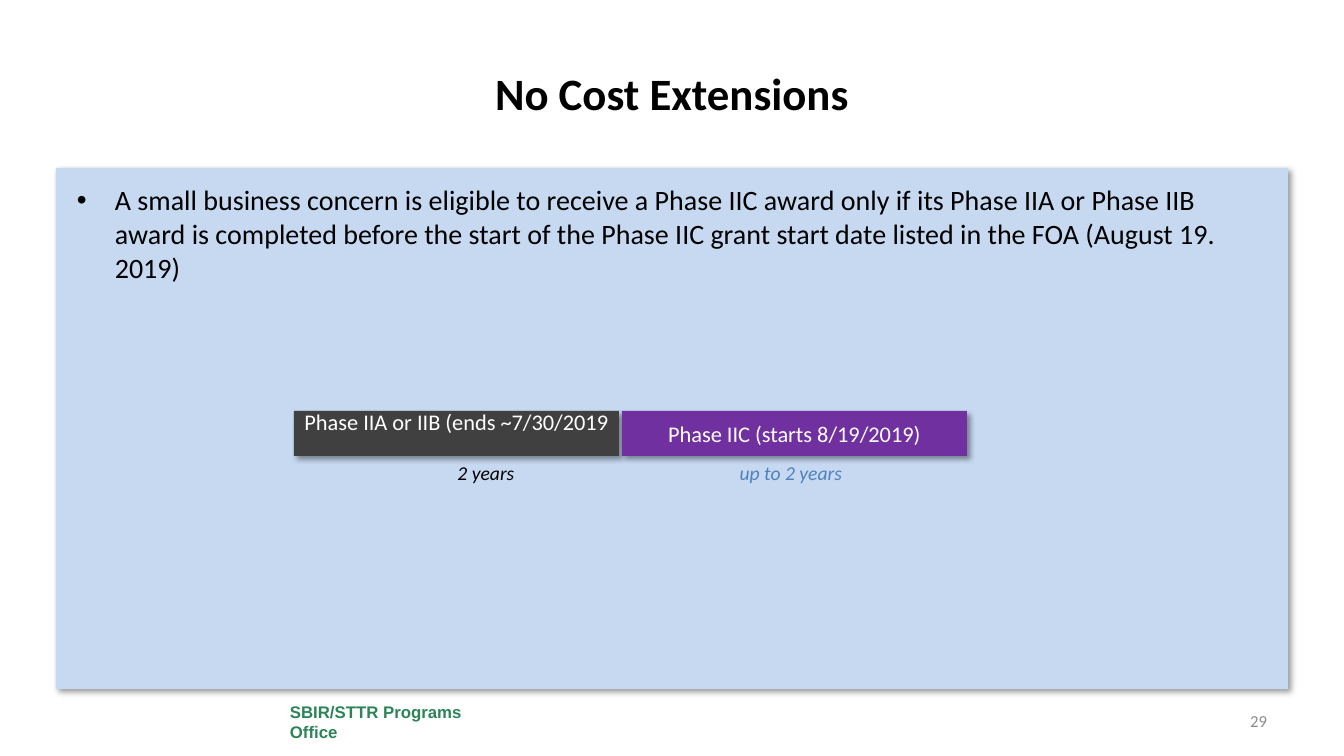
from lxml import etree
from pptx import Presentation
from pptx.dml.color import RGBColor
from pptx.enum import shapes, text
from pptx.oxml import ns
from pptx.util import Pt

PX = 9071.43  # EMU per px, 100.8 px to the inch
BLACK = RGBColor(0x00, 0x00, 0x00)
WHITE = RGBColor(0xFF, 0xFF, 0xFF)
PALE_BLUE = RGBColor(0xC6, 0xD9, 0xF1)
BLUE = RGBColor(0x4F, 0x81, 0xBD)
CHARCOAL = RGBColor(0x40, 0x40, 0x40)
PURPLE = RGBColor(0x70, 0x30, 0xA0)
GREEN = RGBColor(0x2C, 0x84, 0x58)
GRAY = RGBColor(0x8C, 0x8C, 0x8C)
LEFT, CENTER, RIGHT = text.PP_ALIGN.LEFT, text.PP_ALIGN.CENTER, text.PP_ALIGN.RIGHT
TOP, MIDDLE = text.MSO_ANCHOR.TOP, text.MSO_ANCHOR.MIDDLE

prs = Presentation()
prs.slide_width, prs.slide_height = round(1344 * PX), round(756 * PX)
s = prs.slides.add_slide(prs.slide_layouts[5])


def add_panel(box, color):
    """Add a borderless rectangle with a soft shadow to the lower right."""
    sp = s.shapes.add_shape(shapes.MSO_SHAPE.RECTANGLE, *[round(v * PX) for v in box])
    sp.fill.solid()
    sp.fill.fore_color.rgb = color
    sp.line.fill.background()
    sp.shadow.inherit = False
    effects = sp._element.spPr.find(ns.qn("a:effectLst"))
    shadow = etree.SubElement(effects, ns.qn("a:outerShdw"), blurRad=str(Pt(4)),
                              dist=str(Pt(3)), dir="2700000", algn="tl", rotWithShape="0")
    color_el = etree.SubElement(shadow, ns.qn("a:srgbClr"), val="000000")
    etree.SubElement(color_el, ns.qn("a:alpha"), val="40000")
    return sp


def write(sp, words, size, color, align, anchor=MIDDLE, font="Calibri", bold=False, italic=False):
    tf = sp.text_frame
    tf.word_wrap = True
    tf.auto_size = text.MSO_AUTO_SIZE.NONE
    tf.vertical_anchor = anchor
    p = tf.paragraphs[0]
    p.alignment = align
    r = p.add_run()
    r.text = words
    r.font.name, r.font.size = font, Pt(size)
    r.font.bold, r.font.italic = bold, italic
    r.font.color.rgb = color
    return p


add_panel((56, 168, 1232, 521), PALE_BLUE)

title = s.shapes.title
title.left, title.top, title.width, title.height = [round(v * PX) for v in (67, 30, 1210, 126)]
write(title, "No Cost Extensions", 32, BLACK, CENTER, bold=True)

body = s.shapes.add_textbox(*[round(v * PX) for v in (67, 178, 1210, 497)])
p = write(body, "A small business concern is eligible to receive a Phase IIC award only if its "
          "Phase IIA or Phase IIB award is completed before the start of the Phase IIC grant "
          "start date listed in the FOA (August 19. 2019)", 20, BLACK, LEFT, TOP)
pPr = p._p.get_or_add_pPr()
pPr.set("marL", str(round(38 * PX)))
pPr.set("indent", str(round(-38 * PX)))
etree.SubElement(pPr, ns.qn("a:buFont"), typeface="Arial")
etree.SubElement(pPr, ns.qn("a:buChar"), char="•")

phases = [
    (294, 325, CHARCOAL, "Phase IIA or IIB (ends ~7/30/2019", 29, 420, "2 years", BLACK),
    (622, 345, PURPLE, "Phase IIC (starts 8/19/2019)", 5, 725, "up to 2 years", BLUE),
]
for left, width, color, phase, inset, label_left, duration, label_color in phases:
    bar = add_panel((left, 411, width, 45), color)
    write(bar, phase, 16, WHITE, CENTER)
    bar.text_frame.word_wrap = False
    bar.text_frame.margin_bottom = round(inset * PX)
    label = s.shapes.add_textbox(*[round(v * PX) for v in (label_left, 456, 132, 34)])
    write(label, duration, 14, label_color, CENTER, TOP, italic=True)

office = s.shapes.add_textbox(*[round(v * PX) for v in (280, 698, 213, 48)])
write(office, "SBIR/STTR Programs Office", 12, GREEN, LEFT, font="Arial", bold=True)
number = s.shapes.add_textbox(*[round(v * PX) for v in (1064, 701, 213, 40)])
write(number, "29", 12, GRAY, RIGHT)

prs.save("out.pptx")
